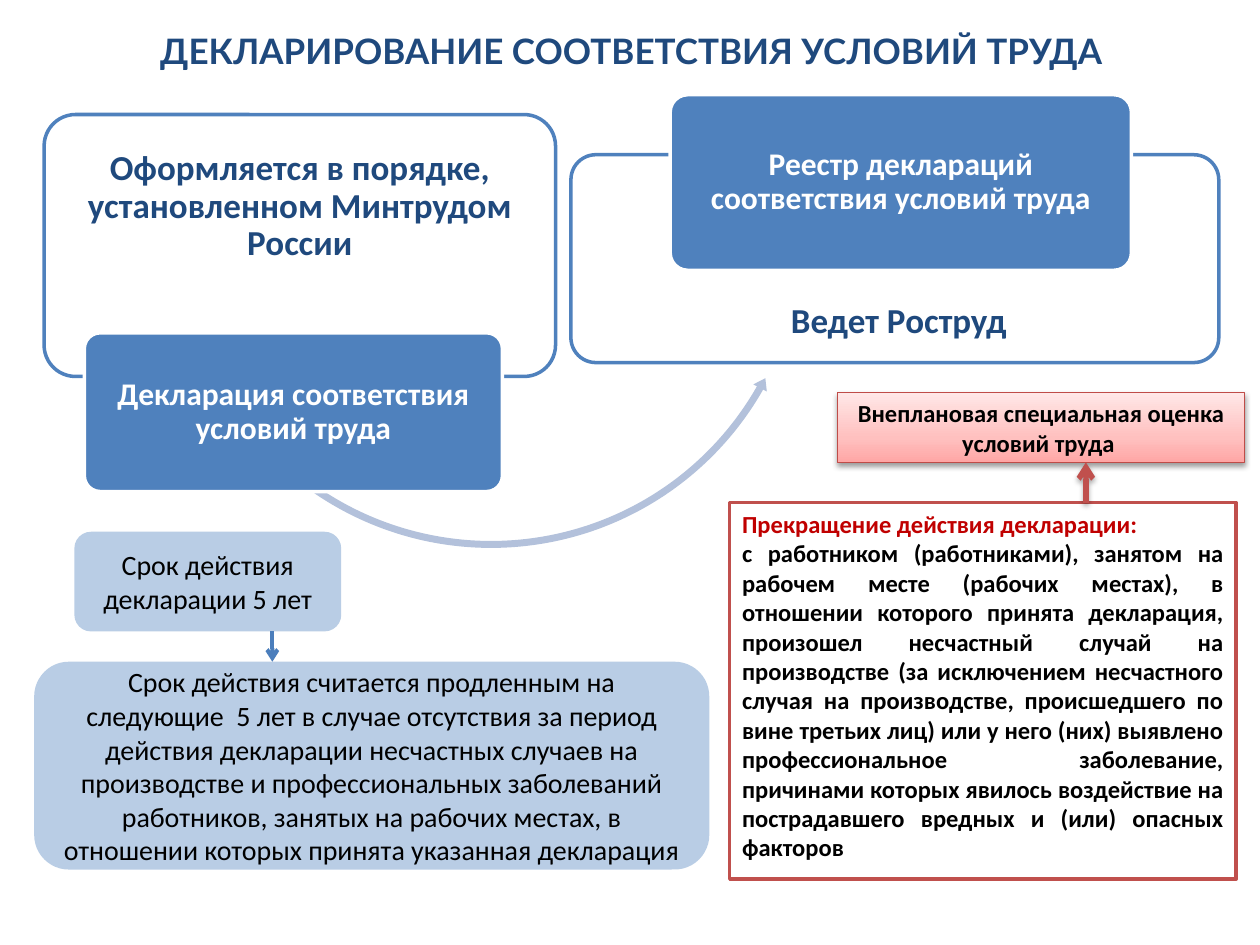
from dataclasses import dataclass
from typing import Optional

from lxml import etree
from pptx import Presentation
from pptx.dml.color import RGBColor
from pptx.enum.shapes import MSO_CONNECTOR, MSO_SHAPE
from pptx.enum.text import MSO_ANCHOR, PP_ALIGN
from pptx.oxml.ns import qn
from pptx.util import Cm, Pt

ROUNDED = MSO_SHAPE.ROUNDED_RECTANGLE
RECTANGLE = MSO_SHAPE.RECTANGLE
CURVED_ARROW = MSO_SHAPE.LEFT_CIRCULAR_ARROW
STRAIGHT = MSO_CONNECTOR.STRAIGHT
TOP, MIDDLE = MSO_ANCHOR.TOP, MSO_ANCHOR.MIDDLE
CENTER, JUSTIFY = PP_ALIGN.CENTER, PP_ALIGN.JUSTIFY

COLORS = {
    "navy": "1F497D", "blue": "4F81BD", "arrow blue": "4B7EBC",
    "pale blue": "B9CDE5", "curve": "B3C1DB", "white": "FFFFFF",
    "black": "000000", "red": "C0504D", "dark red": "C00000",
    "brick": "BF4C48", "rose": "FFA6A5", "pink": "FFC0BF", "blush": "FFE7E7",
}
DEFAULT_INSETS = (0.25, 0.13, 0.25, 0.13)


@dataclass
class Box:
    """A text shape; lengths in centimetres, insets as left, top, right, bottom."""
    left: float
    top: float
    width: float
    height: float
    paragraphs: list[str]
    fill: Optional[str]
    text_color: str
    size: float
    bold: bool = True
    line: Optional[str] = None
    line_width: float = 2
    kind: MSO_SHAPE = ROUNDED
    corner: Optional[float] = None
    insets: tuple[float, float, float, float] = DEFAULT_INSETS
    anchor: MSO_ANCHOR = MIDDLE
    align: PP_ALIGN = CENTER
    spacing: float = 1.0
    font: str = "Calibri"


@dataclass
class Arrow:
    x: float
    start: float
    end: float
    color: str
    width: float


def rgb(name: str) -> RGBColor:
    return RGBColor.from_string(COLORS[name])


def add_color(parent, name: str):
    return etree.SubElement(parent, qn("a:srgbClr"), val=COLORS[name])


def write_text(shape, box: Box) -> None:
    frame = shape.text_frame
    frame.text = "\n".join(box.paragraphs)
    frame.word_wrap = True
    frame.vertical_anchor = box.anchor
    (frame.margin_left, frame.margin_top,
     frame.margin_right, frame.margin_bottom) = map(Cm, box.insets)
    for paragraph in frame.paragraphs:
        paragraph.alignment = box.align
        paragraph.line_spacing = box.spacing
        for run in paragraph.runs:
            run.font.name = box.font
            run.font.size = Pt(box.size)
            run.font.bold = box.bold
            run.font.color.rgb = rgb(box.text_color)


def draw_box(slide, box: Box):
    place = map(Cm, (box.left, box.top, box.width, box.height))
    if box.fill is None:
        shape = slide.shapes.add_textbox(*place)
    else:
        shape = slide.shapes.add_shape(box.kind, *place)
        shape.shadow.inherit = False
        shape.fill.solid()
        shape.fill.fore_color.rgb = rgb(box.fill)
        if box.line:
            shape.line.color.rgb = rgb(box.line)
            shape.line.width = Pt(box.line_width)
        else:
            shape.line.fill.background()
        if box.corner:
            shape.adjustments[0] = box.corner
    write_text(shape, box)
    return shape


def draw_curved_arrow(slide) -> None:
    arrow = slide.shapes.add_shape(CURVED_ARROW, Cm(3.51), Cm(-1.65), Cm(12.78), Cm(12.78))
    arrow.shadow.inherit = False
    arrow.rotation = 12.3
    for index, value in enumerate((0.011, 1.231, 10.387, 81.646, 0.012)):
        arrow.adjustments[index] = value
    arrow.fill.solid()
    arrow.fill.fore_color.rgb = rgb("curve")
    arrow.line.fill.background()


def draw_arrow(slide, arrow: Arrow):
    connector = slide.shapes.add_connector(
        STRAIGHT, Cm(arrow.x), Cm(arrow.start), Cm(arrow.x), Cm(arrow.end))
    connector.line.color.rgb = rgb(arrow.color)
    connector.line.width = Pt(arrow.width)
    properties = connector._element.spPr
    etree.SubElement(properties.find(qn("a:ln")), qn("a:tailEnd"), type="arrow")
    etree.SubElement(properties, qn("a:effectLst"))
    return connector


def add_shadow(shape, opacity: int, distance: float) -> None:
    """Drop a black shadow straight down; opacity in percent, distance in points."""
    effects = shape._element.spPr.find(qn("a:effectLst"))
    shadow = etree.SubElement(effects, qn("a:outerShdw"), blurRad=str(Pt(3.1)),
                              dist=str(Pt(distance)), dir="5400000", rotWithShape="0")
    color = add_color(shadow, "black")
    etree.SubElement(color, qn("a:alpha"), val=str(opacity * 1000))


def fill_gradient(shape, stops: list[tuple[int, str]]) -> None:
    """Replace the solid fill with a gradient that runs from bottom to top."""
    properties = shape._element.spPr
    gradient = etree.Element(qn("a:gradFill"), rotWithShape="1")
    stop_list = etree.SubElement(gradient, qn("a:gsLst"))
    for percent, name in stops:
        stop = etree.SubElement(stop_list, qn("a:gs"), pos=str(percent * 1000))
        add_color(stop, name)
    etree.SubElement(gradient, qn("a:lin"), ang="16200000", scaled="1")
    properties.replace(properties.find(qn("a:solidFill")), gradient)


def panel(left, top, width, height, text, insets) -> Box:
    return Box(left, top, width, height, [text], "white", "navy", 20, line="blue",
               corner=0.12, insets=insets, anchor=TOP, spacing=0.9)


def card(left, top, width, height, text) -> Box:
    return Box(left, top, width, height, [text], "blue", "white", 18, line="white",
               corner=0.1, insets=(0.2, 0.2, 0.2, 0.2), spacing=0.9)


def term(left, top, width, height, text) -> Box:
    return Box(left, top, width, height, [text], "pale blue", "black", 16, bold=False)


TITLE = Box(1.3, 0.33, 22.86, 1.37, ["ДЕКЛАРИРОВАНИЕ СООТВЕТСТВИЯ УСЛОВИЙ ТРУДА"],
            None, "navy", 20, font="Lato")
ISSUE_PANEL = panel(0.89, 2.31, 10.31, 5.28,
                    "Оформляется в порядке, установленном Минтрудом России",
                    (0.53, 0.53, 0.53, 2.16))
FRONT_BOXES = [
    card(1.7, 6.71, 8.43, 3.2, "Декларация соответствия условий труда"),
    panel(11.51, 3.12, 13.06, 4.19, " Ведет Роструд", (0.48, 2.85, 0.48, 0.48)),
    card(13.51, 1.91, 9.3, 3.54, "Реестр деклараций соответствия условий труда"),
    term(1.5, 10.72, 5.38, 2.01, "Срок действия декларации 5 лет"),
    term(0.69, 13.34, 13.61, 4.19,
         "Срок действия считается продленным на следующие  5 лет в случае отсутствия "
         "за период действия декларации несчастных случаев на производстве и "
         "профессиональных заболеваний работников, занятых на рабочих местах, "
         "в отношении которых принята указанная декларация"),
]
TERMINATION = Box(
    14.71, 10.13, 10.21, 7.59,
    ["Прекращение действия декларации:",
     "с работником (работниками), занятом на рабочем месте (рабочих местах), "
     "в отношении которого принята декларация, произошел несчастный случай на "
     "производстве (за исключением несчастного случая на производстве, происшедшего "
     "по вине третьих лиц) или у него (них) выявлено профессиональное заболевание, "
     "причинами которых явилось воздействие на пострадавшего вредных и (или) "
     "опасных факторов"],
    "white", "black", 14, line="red", kind=RECTANGLE, anchor=TOP, align=JUSTIFY)
ASSESSMENT = Box(16.89, 7.92, 8.2, 1.4, ["Внеплановая специальная оценка условий труда "],
                 "pink", "black", 14, line="brick", line_width=0.75, kind=RECTANGLE)


def main() -> None:
    presentation = Presentation()
    presentation.slide_width, presentation.slide_height = Cm(25.4), Cm(19.05)
    slide = presentation.slides.add_slide(presentation.slide_layouts[6])
    draw_box(slide, TITLE)
    draw_box(slide, ISSUE_PANEL)
    draw_curved_arrow(slide)
    for box in FRONT_BOXES:
        draw_box(slide, box)
    draw_arrow(slide, Arrow(5.49, 12.73, 13.34, "arrow blue", 2.25))
    termination = draw_box(slide, TERMINATION)
    termination.text_frame.paragraphs[0].runs[0].font.color.rgb = rgb("dark red")
    assessment = draw_box(slide, ASSESSMENT)
    fill_gradient(assessment, [(0, "rose"), (35, "pink"), (100, "blush")])
    add_shadow(assessment, 38, 1.6)
    add_shadow(draw_arrow(slide, Arrow(21.89, 10.13, 9.32, "red", 3)), 35, 1.8)
    presentation.save("out.pptx")


if __name__ == "__main__":
    main()
